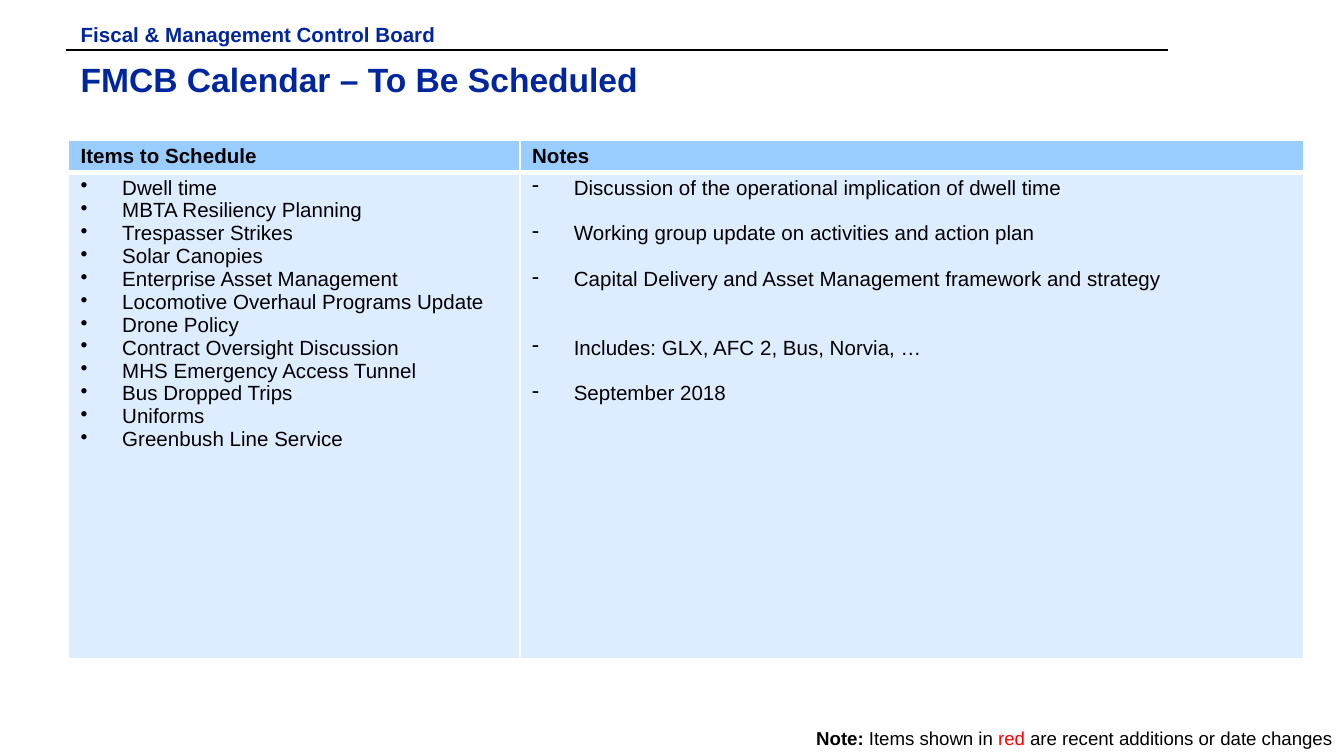
from lxml import etree
from pptx import Presentation
from pptx.dml.color import RGBColor
from pptx.enum.shapes import MSO_CONNECTOR
from pptx.enum.text import MSO_ANCHOR, PP_ALIGN
from pptx.oxml.ns import qn
from pptx.util import Inches, Pt

STRAIGHT = MSO_CONNECTOR.STRAIGHT
MIDDLE = MSO_ANCHOR.MIDDLE
TOP = MSO_ANCHOR.TOP
LEFT = PP_ALIGN.LEFT
RIGHT = PP_ALIGN.RIGHT

BLACK = RGBColor(0x00, 0x00, 0x00)
WHITE = RGBColor(0xFF, 0xFF, 0xFF)
NAVY = RGBColor(0x00, 0x26, 0x9E)
RED = RGBColor(0xFF, 0x00, 0x00)
SKY = RGBColor(0x99, 0xCC, 0xFF)
PALE = RGBColor(0xDE, 0xEC, 0xFF)

FONT = "Arial"
SIZE = 11
PITCH = 12.24
INDENT = Inches(0.31)

HEADS = ["Items to Schedule", "Notes"]
ITEMS = [
    "Dwell time",
    "MBTA Resiliency Planning",
    "Trespasser Strikes",
    "Solar Canopies",
    "Enterprise Asset Management",
    "Locomotive Overhaul Programs Update",
    "Drone Policy",
    "Contract Oversight Discussion",
    "MHS Emergency Access Tunnel",
    "Bus Dropped Trips",
    "Uniforms",
    "Greenbush Line Service",
]
NOTES = {
    "Dwell time": "Discussion of the operational implication of dwell time",
    "Trespasser Strikes": "Working group update on activities and action plan",
    "Enterprise Asset Management":
        "Capital Delivery and Asset Management framework and strategy",
    "Contract Oversight Discussion": "Includes: GLX, AFC 2, Bus, Norvia, …",
    "Bus Dropped Trips": "September 2018",
}


def add_run(para, text, size, color=BLACK, bold=False):
    run = para.add_run()
    run.text = text
    font = run.font
    font.name = FONT
    font.size = Pt(size)
    font.bold = bold
    font.color.rgb = color


def add_text(slide, box, runs, size, align=LEFT):
    frame = slide.shapes.add_textbox(*map(Inches, box)).text_frame
    frame.word_wrap = True
    frame.vertical_anchor = TOP
    frame.margin_left = frame.margin_right = Inches(0.09)
    frame.margin_top = frame.margin_bottom = Inches(0.04)
    para = frame.paragraphs[0]
    para.alignment = align
    for text, color, bold in runs:
        add_run(para, text, size, color, bold)


def add_rule(slide, left, top, width):
    line = slide.shapes.add_connector(
        STRAIGHT, Inches(left), Inches(top), Inches(left + width), Inches(top))
    line.line.color.rgb = BLACK
    line.line.width = Pt(1)
    etree.SubElement(line._element.spPr, qn("a:effectLst"))


def add_header(slide, left, top, width):
    add_rule(slide, left - 0.02, top + 0.25, width - 0.16)
    add_text(slide, (left, top + 0.28, width, 0.48),
             [("FMCB Calendar – To Be Scheduled", NAVY, True)], 18)
    add_text(slide, (left, top, 3.41, 0.19),
             [("Fiscal & Management Control Board", NAVY, True)], SIZE)


def style_cell(cell, fill, anchor, edges):
    props = cell._tc.get_or_add_tcPr()
    for side, width in zip("LRTB", edges):
        edge = etree.SubElement(props, qn(f"a:ln{side}"), w=str(Pt(width)))
        solid = etree.SubElement(edge, qn("a:solidFill"))
        etree.SubElement(solid, qn("a:srgbClr"), val=str(WHITE))
    cell.fill.solid()
    cell.fill.fore_color.rgb = fill
    cell.vertical_anchor = anchor
    cell.margin_left = cell.margin_right = Inches(0.09)
    cell.margin_top = cell.margin_bottom = Inches(0.03)


def add_list(cell, mark, lines):
    frame = cell.text_frame
    last = None
    for row, text in lines:
        para = frame.paragraphs[0] if last is None else frame.add_paragraph()
        props = para._p.get_or_add_pPr()
        props.set("marL", str(INDENT))
        props.set("indent", str(-INDENT))
        etree.SubElement(props, qn("a:buChar"), char=mark)
        para.font.size = Pt(SIZE)
        if last is not None:
            para.space_before = Pt((row - last - 1) * PITCH)
        add_run(para, text, SIZE)
        etree.SubElement(para._p, qn("a:endParaRPr"), sz=str(SIZE * 100))
        last = row


def add_grid(slide, left, top, widths, heights):
    box = map(Inches, (left, top, sum(widths), sum(heights)))
    table = slide.shapes.add_table(2, 2, *box).table
    for col, width in zip(table.columns, widths):
        col.width = Inches(width)
    for row, height in zip(table.rows, heights):
        row.height = Inches(height)
    for col, head in enumerate(HEADS):
        cell = table.cell(0, col)
        style_cell(cell, SKY, MIDDLE, (1, 1, 1, 3))
        add_run(cell.text_frame.paragraphs[0], head, SIZE, bold=True)
        style_cell(table.cell(1, col), PALE, TOP, (1, 1, 3, 1))
    add_list(table.cell(1, 0), "•", enumerate(ITEMS))
    notes = [(row, NOTES[item]) for row, item in enumerate(ITEMS) if item in NOTES]
    add_list(table.cell(1, 1), "-", notes)


def add_footer(slide, box):
    runs = [
        ("Note: ", BLACK, True),
        ("Items shown in ", BLACK, False),
        ("red", RED, False),
        (" are recent additions or date changes", BLACK, False),
    ]
    add_text(slide, box, runs, 10, RIGHT)


def main():
    deck = Presentation()
    deck.slide_width = Inches(10)
    deck.slide_height = deck.slide_width * 9 // 16
    slide = deck.slides.add_slide(deck.slide_layouts[6])
    add_header(slide, 0.51, 0.12, 8.36)
    add_grid(slide, 0.51, 1.04, (3.36, 5.83), (0.22, 3.62))
    add_footer(slide, (5.8, 5.37, 4.2, 0.26))
    deck.save("out.pptx")


if __name__ == "__main__":
    main()
